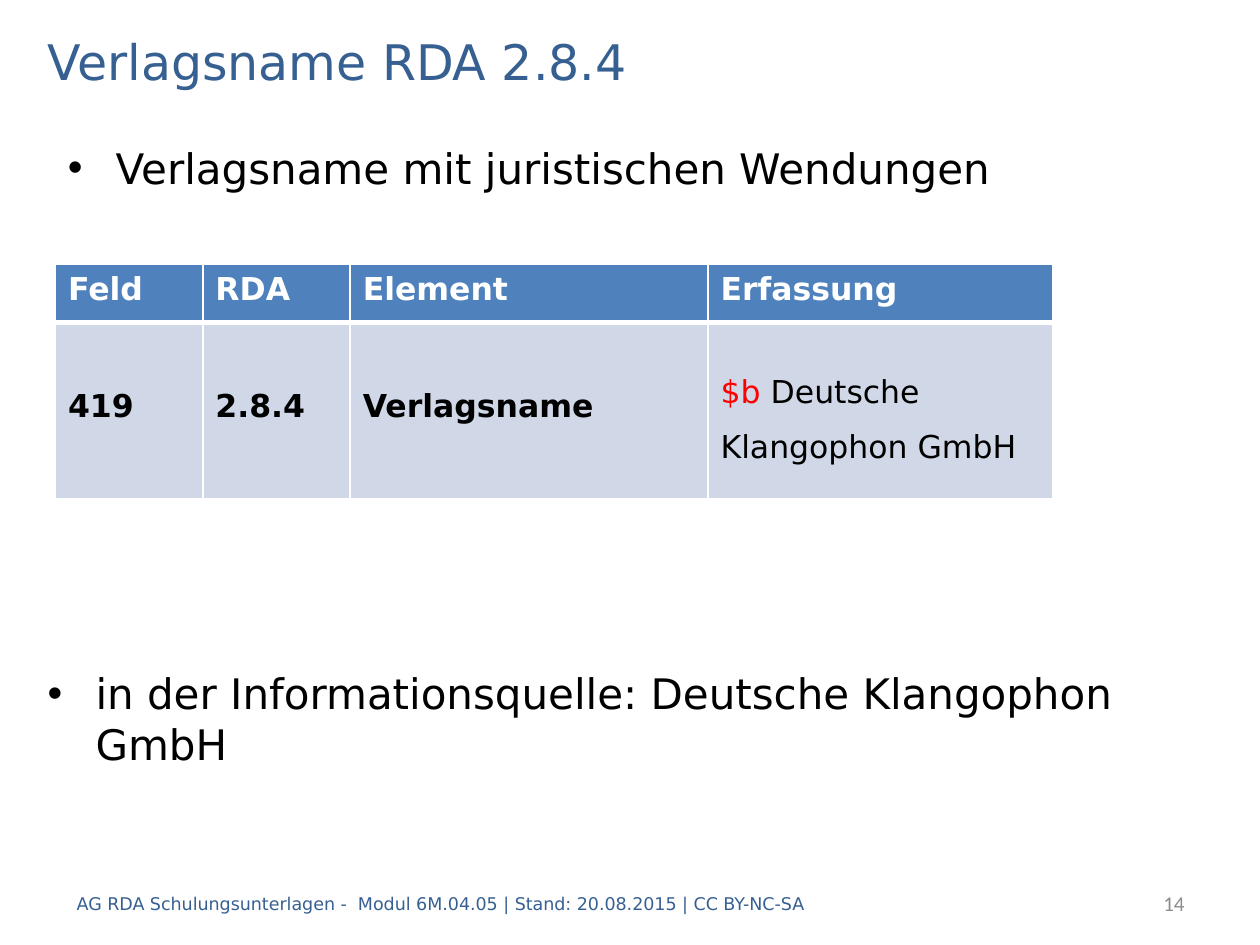
from dataclasses import dataclass

from lxml import etree
from pptx import Presentation
from pptx.dml.color import RGBColor
from pptx.enum.text import MSO_ANCHOR, PP_ALIGN
from pptx.oxml.ns import qn
from pptx.util import Inches, Pt

TOP, MIDDLE = MSO_ANCHOR.TOP, MSO_ANCHOR.MIDDLE
LEFT, RIGHT = PP_ALIGN.LEFT, PP_ALIGN.RIGHT
GRID_COLUMNS, GRID_ROWS = 100, 75
PUBLISHER = "Deutsche Klangophon GmbH"


@dataclass(frozen=True)
class Theme:
    font: str = "DejaVu Sans"
    number_font: str = "Calibri"
    heading: str = "376092"
    text: str = "000000"
    muted: str = "8C8C8C"
    accent: str = "FF0000"
    white: str = "FFFFFF"
    header_fill: str = "4F81BD"
    body_fill: str = "D0D8E8"
    title_size: int = 28
    bullet_size: int = 24
    table_size: int = 18
    number_size: int = 12
    footer_size: int = 10


class SlideBuilder:
    def __init__(self, presentation, theme):
        self.theme = theme
        self.slide = presentation.slides.add_slide(presentation.slide_layouts[6])
        self.column = presentation.slide_width / GRID_COLUMNS
        self.row = presentation.slide_height / GRID_ROWS

    def place(self, left, top, width, height):
        """Turn grid columns and rows into slide lengths."""
        return (int(left * self.column), int(top * self.row),
                int(width * self.column), int(height * self.row))

    def style(self, paragraph, size, color, bold=False, font=None):
        paragraph.font.name = font or self.theme.font
        paragraph.font.size = Pt(size)
        paragraph.font.bold = bold
        paragraph.font.color.rgb = RGBColor.from_string(color)

    def text(self, area, content, size, color, anchor=MIDDLE, align=LEFT, font=None):
        frame = self.slide.shapes.add_textbox(*self.place(*area)).text_frame
        frame.word_wrap = True
        frame.vertical_anchor = anchor
        paragraph = frame.paragraphs[0]
        paragraph.text = content
        paragraph.alignment = align
        self.style(paragraph, size, color, font=font)
        return paragraph

    def bullet(self, area, content):
        paragraph = self.text(area, content, self.theme.bullet_size,
                              self.theme.text, anchor=TOP)
        paragraph.space_before = Pt(3)
        properties = paragraph._p.get_or_add_pPr()
        indent = Inches(0.38)
        properties.set("marL", str(indent))
        properties.set("indent", str(-indent))
        bullet_font = etree.SubElement(properties, qn("a:buFont"))
        bullet_font.set("typeface", "Arial")
        etree.SubElement(properties, qn("a:buChar")).set("char", "•")
        # The default run style has to follow the bullet.
        properties.append(properties.find(qn("a:defRPr")))

    def cell_borders(self, cell, **widths):
        properties = cell._tc.get_or_add_tcPr()
        for side in "LRTB":
            line = etree.SubElement(properties, qn(f"a:ln{side}"))
            line.set("w", str(Pt(widths.get(side, 1))))
            fill = etree.SubElement(line, qn("a:solidFill"))
            etree.SubElement(fill, qn("a:srgbClr")).set("val", self.theme.white)

    def cell_fill(self, cell, color):
        cell.fill.solid()
        cell.fill.fore_color.rgb = RGBColor.from_string(color)

    def table(self, left, top, widths, heights, header, entries):
        """Draw a header row and one row of entries; each entry lists (text, color) runs."""
        theme = self.theme
        area = self.place(left, top, sum(widths), sum(heights))
        table = self.slide.shapes.add_table(2, len(widths), *area).table
        for column, width in zip(table.columns, widths):
            column.width = int(width * self.column)
        for row, height in zip(table.rows, heights):
            row.height = int(height * self.row)

        for index, (label, runs) in enumerate(zip(header, entries)):
            head, body = table.cell(0, index), table.cell(1, index)
            self.cell_borders(head, B=3)
            self.cell_fill(head, theme.header_fill)
            paragraph = head.text_frame.paragraphs[0]
            paragraph.text = label
            self.style(paragraph, theme.table_size, theme.white, bold=True)

            self.cell_borders(body, T=3)
            self.cell_fill(body, theme.body_fill)
            body.vertical_anchor = MIDDLE
            paragraph = body.text_frame.paragraphs[0]
            is_last = index == len(widths) - 1
            paragraph.line_spacing = 1.5 if is_last else Pt(16)
            paragraph.space_before = paragraph.space_after = Pt(6)
            self.style(paragraph, theme.table_size, theme.text, bold=not is_last)
            for content, color in runs:
                run = paragraph.add_run()
                run.text = content
                run.font.color.rgb = RGBColor.from_string(color)


def main():
    presentation = Presentation()
    presentation.slide_width, presentation.slide_height = Inches(10), Inches(7.5)
    theme = Theme()
    builder = SlideBuilder(presentation, theme)

    builder.text((2.8, 2, 94.5, 5.6), "Verlagsname RDA 2.8.4",
                 theme.title_size, theme.heading)
    builder.bullet((4.4, 10.8, 94.5, 7.1), "Verlagsname mit juristischen Wendungen")
    builder.table(
        4.4, 21, widths=(11.7, 11.7, 28.4, 27.4), heights=(4.6, 14),
        header=("Feld", "RDA", "Element", "Erfassung"),
        entries=([("419", theme.text)], [("2.8.4", theme.text)],
                 [("Verlagsname", theme.text)],
                 [("$b", theme.accent), (f" {PUBLISHER}", theme.text)]))
    builder.bullet((2.8, 52.5, 94.5, 13.4), f"in der Informationsquelle: {PUBLISHER}")
    builder.text((5.1, 69.7, 83.5, 4),
                 "AG RDA Schulungsunterlagen -  Modul 6M.04.05 | Stand: 20.08.2015 | CC BY-NC-SA",
                 theme.footer_size, theme.heading)
    builder.text((79.1, 69.7, 15.9, 4), "14", theme.number_size, theme.muted,
                 align=RIGHT, font=theme.number_font)

    presentation.save("out.pptx")


if __name__ == "__main__":
    main()
